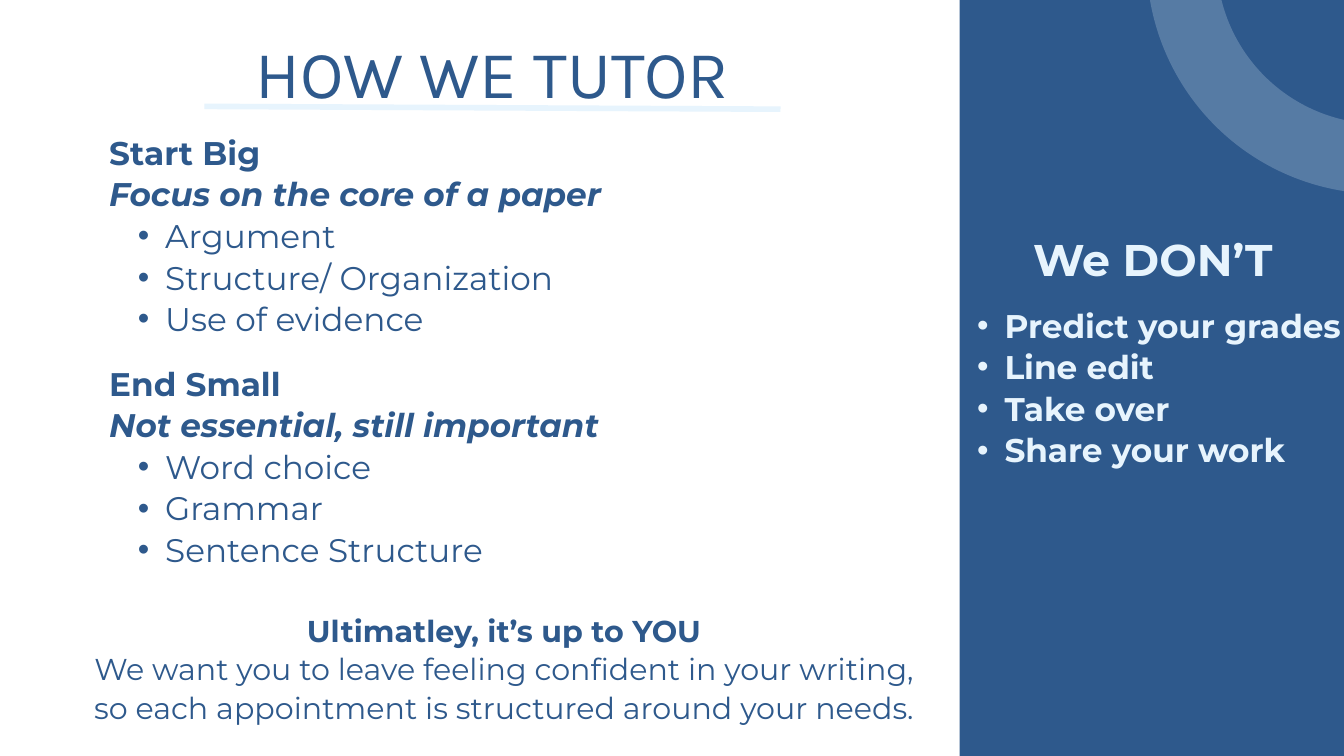
from lxml import etree
from pptx import Presentation
from pptx.dml.color import RGBColor
from pptx.enum.shapes import MSO_CONNECTOR, MSO_SHAPE
from pptx.enum.text import PP_ALIGN
from pptx.oxml.ns import qn
from pptx.util import Emu, Pt

NAVY = RGBColor(0x2E, 0x59, 0x8C)
PALE = RGBColor(0xE7, 0xF4, 0xFD)
HEADING_FONT = "Karla"
BODY_FONT = "Montserrat"
RECTANGLE = MSO_SHAPE.RECTANGLE
OVAL = MSO_SHAPE.OVAL
STRAIGHT = MSO_CONNECTOR.STRAIGHT
LEFT = PP_ALIGN.LEFT
CENTER = PP_ALIGN.CENTER
PX = 9525
BULLET_MARGIN = 80
BULLET_HANG = 39

PLAIN, BOLD, BOLD_ITALIC = (False, False), (True, False), (True, True)


def px(value):
    return Emu(value * PX)


class SlideWriter:
    def __init__(self, page):
        self.page = page

    def panel(self, left, top, width, height, color):
        shape = self.page.shapes.add_shape(
            RECTANGLE, px(left), px(top), px(width), px(height))
        shape.shadow.inherit = False
        shape.fill.solid()
        shape.fill.fore_color.rgb = color
        shape.line.fill.background()

    def ring(self, left, top, diameter, color, weight, opacity):
        shape = self.page.shapes.add_shape(
            OVAL, px(left), px(top), px(diameter), px(diameter))
        shape.shadow.inherit = False
        shape.fill.background()
        shape.line.color.rgb = color
        shape.line.width = Pt(weight)
        tint = shape.line._get_or_add_ln().find(".//" + qn("a:srgbClr"))
        etree.SubElement(tint, qn("a:alpha"), val=str(opacity * 1000))

    def rule(self, start, end, color, weight):
        line = self.page.shapes.add_connector(
            STRAIGHT, *(px(value) for value in start + end))
        line.line.color.rgb = color
        line.line.width = Pt(weight)
        etree.SubElement(line._element.spPr, qn("a:effectLst"))

    def text(self, left, top, width, height, lines, size, spacing,
             color=NAVY, font=BODY_FONT, align=LEFT):
        box = self.page.shapes.add_textbox(
            px(left), px(top), px(width), px(height))
        frame = box.text_frame
        frame.margin_left = frame.margin_right = 0
        frame.margin_top = frame.margin_bottom = 0
        frame.word_wrap = True
        frame.text = "\n".join(words for words, style, bulleted in lines)
        for para, (words, style, bulleted) in zip(frame.paragraphs, lines):
            para.alignment = align
            para.line_spacing = Pt(spacing)
            if bulleted:
                self.bullet(para)
            for span in para.runs:
                span.font.name = font
                span.font.size = Pt(size)
                span.font.color.rgb = color
                span.font.bold, span.font.italic = style

    def bullet(self, para):
        para.level = 1
        properties = para._p.get_or_add_pPr()
        properties.set("marL", str(px(BULLET_MARGIN)))
        properties.set("indent", str(-px(BULLET_HANG)))
        etree.SubElement(properties, qn("a:buFont"), typeface="Arial")
        etree.SubElement(properties, qn("a:buChar"), char="•")


def bullets(items, style):
    return [(item, style, True) for item in items]


def topic(heading, summary, items):
    return [(heading, BOLD, False), (summary, BOLD_ITALIC, False)] + bullets(items, PLAIN)


def main():
    deck = Presentation()
    deck.slide_width, deck.slide_height = px(1920), px(1080)
    writer = SlideWriter(deck.slides.add_slide(deck.slide_layouts[6]))

    writer.panel(1371, 0, 549, 1080, NAVY)
    writer.text(240, 59, 927, 104, [("HOW WE TUTOR", PLAIN, False)],
                72, 75.6, font=HEADING_FONT, align=CENTER)
    writer.text(156, 186, 959, 353, topic(
        "Start Big", "Focus on the core of a paper",
        ["Argument", "Structure/ Organization", "Use of evidence"]), 35.1, 44.6)
    writer.text(1167, 327, 960, 79, [("We DON’T", BOLD, False)],
                47.5, 60.4, color=PALE, align=CENTER)
    writer.text(156, 516, 959, 295, topic(
        "End Small", "Not essential, still important",
        ["Word choice", "Grammar", "Sentence Structure"]), 35, 44.5)
    writer.text(108, 872, 1224, 160, [
        ("Ultimatley, it’s up to YOU", BOLD, False),
        ("We want you to leave feeling confident in your writing, "
         "so each appointment is structured around your needs.", PLAIN, False),
    ], 32.3, 41, align=CENTER)
    writer.rule((292, 152), (1115, 156), PALE, 6)
    writer.text(1355, 433, 574, 295, bullets(
        ["Predict your grades", "Line edit", "Take over", "Share your work"], BOLD),
        35.1, 44.6, color=PALE)
    writer.ring(1688, -340, 567, PALE, 75, 22)

    deck.save("out.pptx")


if __name__ == "__main__":
    main()
